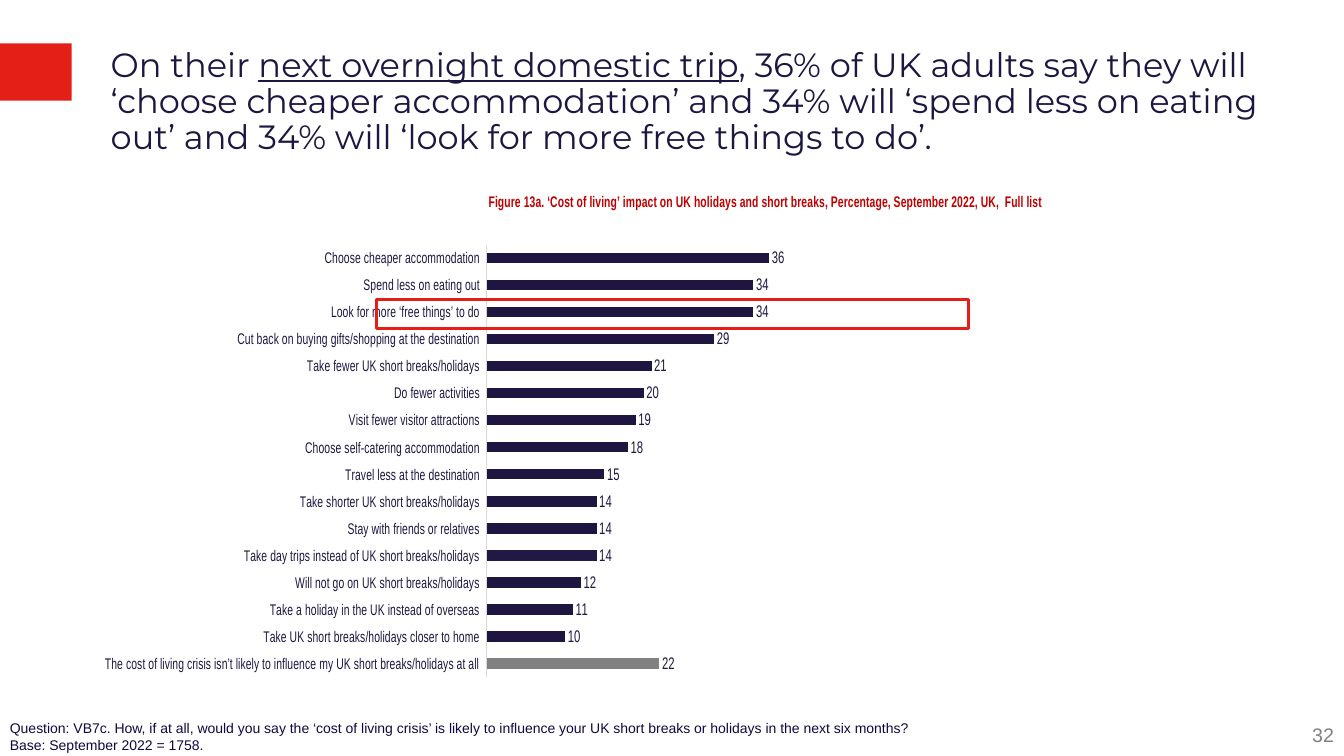
from dataclasses import dataclass
from lxml.etree import SubElement
from pptx import Presentation
from pptx.chart.data import CategoryChartData
from pptx.dml.color import RGBColor
from pptx.enum.chart import XL_CHART_TYPE, XL_LABEL_POSITION, XL_TICK_LABEL_POSITION, XL_TICK_MARK
from pptx.enum.shapes import MSO_SHAPE
from pptx.enum.text import PP_ALIGN
from pptx.oxml import parse_xml
from pptx.oxml.ns import nsdecls, qn
from pptx.slide import Slide
from pptx.util import Inches, Pt

HUES = {
    "navy": "1E1541",
    "red": "E41F18",
    "title": "C00000",
    "note": "120742",
    "grey": "818181",
    "page": "808080",
    "axis": "D9D9D9",
    "deep": "211843",
}


@dataclass
class Box:
    left: float
    top: float
    width: float
    height: float

    def size(self) -> list:
        return [Inches(n) for n in (self.left, self.top, self.width, self.height)]


@dataclass
class Text:
    box: Box
    lines: list[list[str]]
    size: int
    hue: str
    face: str = "Arial"
    align: PP_ALIGN = PP_ALIGN.LEFT
    space: float = 1.0


@dataclass
class Block:
    box: Box
    fill: str = ""
    line: str = ""


@dataclass
class Bar:
    label: str
    value: int
    hue: str = "navy"


TEXTS = [
    Text(Box(1, 0.43, 11.94, 0.57), [[
        "On their ",
        "next overnight domestic trip",
        ", 36% of UK adults say they will ‘choose cheaper accommodation’ and 34% will "
        "‘spend less on eating out’ and 34% will ‘look for more free things to do’.",
    ]], 24, "navy", "Montserrat", space=0.9),
    Text(Box(0, 7.09, 10.17, 0.37), [
        ["Question: VB7c. How, if at all, would you say the ‘cost of living crisis’ is likely to "
         "influence your UK short breaks or holidays in the next six months?"],
        ["Base: September 2022 = 1758."],
    ], 10, "note"),
    Text(Box(10.48, 7.12, 2.85, 0.34), [["32"]], 14, "page", align=PP_ALIGN.RIGHT),
]
FLAG = Block(Box(0, 0.43, 0.71, 0.57), fill="red")
FRAME = Block(Box(3.73, 2.97, 5.88, 0.29), line="red")
BARS = [
    Bar("Choose cheaper accommodation", 36),
    Bar("Spend less on eating out", 34),
    Bar("Look for more ‘free things’ to do", 34),
    Bar("Cut back on buying gifts/shopping at the destination", 29),
    Bar("Take fewer UK short breaks/holidays", 21),
    Bar("Do fewer activities", 20),
    Bar("Visit fewer visitor attractions", 19),
    Bar("Choose self-catering accommodation", 18),
    Bar("Travel less at the destination", 15),
    Bar("Take shorter UK short breaks/holidays", 14),
    Bar("Stay with friends or relatives", 14),
    Bar("Take day trips instead of UK short breaks/holidays", 14, "deep"),
    Bar("Will not go on UK short breaks/holidays", 12),
    Bar("Take a holiday in the UK instead of overseas", 11),
    Bar("Take UK short breaks/holidays closer to home", 10),
    Bar("The cost of living crisis isn’t likely to influence my UK short breaks/holidays at all",
        22, "grey"),
]


def tint(name: str) -> RGBColor:
    return RGBColor.from_string(HUES[name])


def style(font, size: int, hue: str, face: str = "Arial", bold: bool = False) -> None:
    font.size = Pt(size)
    font.name = face
    font.bold = bold
    font.color.rgb = tint(hue)


def write(slide: Slide, text: Text) -> None:
    frame = slide.shapes.add_textbox(*text.box.size()).text_frame
    frame.word_wrap = True
    for i, line in enumerate(text.lines):
        para = frame.add_paragraph() if i else frame.paragraphs[0]
        para.alignment = text.align
        para.line_spacing = text.space
        style(para.font, text.size, text.hue, text.face)
        for j, part in enumerate(line):
            run = para.add_run()
            run.text = part
            if j == 1:
                run.font.underline = True


def draw(slide: Slide, block: Block) -> None:
    shape = slide.shapes.add_shape(MSO_SHAPE.RECTANGLE, *block.box.size())
    shape.shadow.inherit = False
    if block.fill:
        shape.fill.solid()
        shape.fill.fore_color.rgb = tint(block.fill)
    else:
        shape.fill.background()
    if block.line:
        shape.line.color.rgb = tint(block.line)
        shape.line.width = Pt(2.25)
    else:
        shape.line.fill.background()


def place(parent, after: str, spots: dict[str, float], inner: bool = False) -> None:
    for old in parent.findall(qn("c:layout")):
        parent.remove(old)
    layout = parse_xml(f"<c:layout {nsdecls('c')}/>")
    manual = SubElement(layout, qn("c:manualLayout"))
    if inner:
        SubElement(manual, qn("c:layoutTarget")).set("val", "inner")
    for key in ("xMode", "yMode"):
        SubElement(manual, qn(f"c:{key}")).set("val", "edge")
    for key, val in spots.items():
        SubElement(manual, qn(f"c:{key}")).set("val", str(val))
    if after:
        parent.find(qn(after)).addnext(layout)
    else:
        parent.insert(0, layout)


def plot(slide: Slide, box: Box) -> None:
    data = CategoryChartData(number_format="0")
    data.categories = [bar.label for bar in BARS]
    data.add_series("Series 1", [bar.value for bar in BARS])
    chart = slide.shapes.add_chart(XL_CHART_TYPE.BAR_CLUSTERED, *box.size(), data).chart
    chart.has_legend = False
    chart.font.size = Pt(10)
    chart.font.name = "Arial"

    head = chart.chart_title.text_frame
    head.text = ("Figure 13a. ‘Cost of living’ impact on UK holidays and short breaks, "
                 "Percentage, September 2022, UK,  Full list")
    style(head.paragraphs[0].font, 11, "title", bold=True)
    space = chart.element.chart
    place(space.find(qn("c:title")), "c:tx", {"x": 0, "y": 0.01})
    place(space.plotArea, "", {"x": 0.45, "y": 0.12, "w": 1, "h": 0.85}, True)

    axis = chart.category_axis
    axis.reverse_order = True
    axis.major_tick_mark = XL_TICK_MARK.NONE
    axis.minor_tick_mark = XL_TICK_MARK.NONE
    axis.tick_label_position = XL_TICK_LABEL_POSITION.LOW
    axis.format.line.color.rgb = tint("axis")
    axis.format.line.width = Pt(0.75)
    style(axis.tick_labels.font, 11, "navy")
    scale = chart.value_axis
    scale.minimum_scale = 0
    scale.maximum_scale = 100
    scale.has_major_gridlines = False
    scale.visible = False

    group = chart.plots[0]
    group.gap_width = 160
    group.vary_by_categories = False
    series = group.series[0]
    series.format.fill.solid()
    series.format.fill.fore_color.rgb = tint("navy")
    for i, bar in enumerate(BARS):
        if bar.hue != "navy":
            fill = series.points[i].format.fill
            fill.solid()
            fill.fore_color.rgb = tint(bar.hue)
    labels = series.data_labels
    labels.show_value = True
    labels.number_format = "0"
    labels.number_format_is_linked = False
    labels.position = XL_LABEL_POSITION.OUTSIDE_END
    style(labels.font, 12, "navy")


def main() -> None:
    deck = Presentation()
    deck.slide_width = Inches(13.33)
    deck.slide_height = Inches(7.5)
    slide = deck.slides.add_slide(deck.slide_layouts[6])
    draw(slide, FLAG)
    plot(slide, Box(1.04, 1.82, 11.57, 5.05))
    for text in TEXTS:
        write(slide, text)
    draw(slide, FRAME)
    deck.save("out.pptx")


if __name__ == "__main__":
    main()
